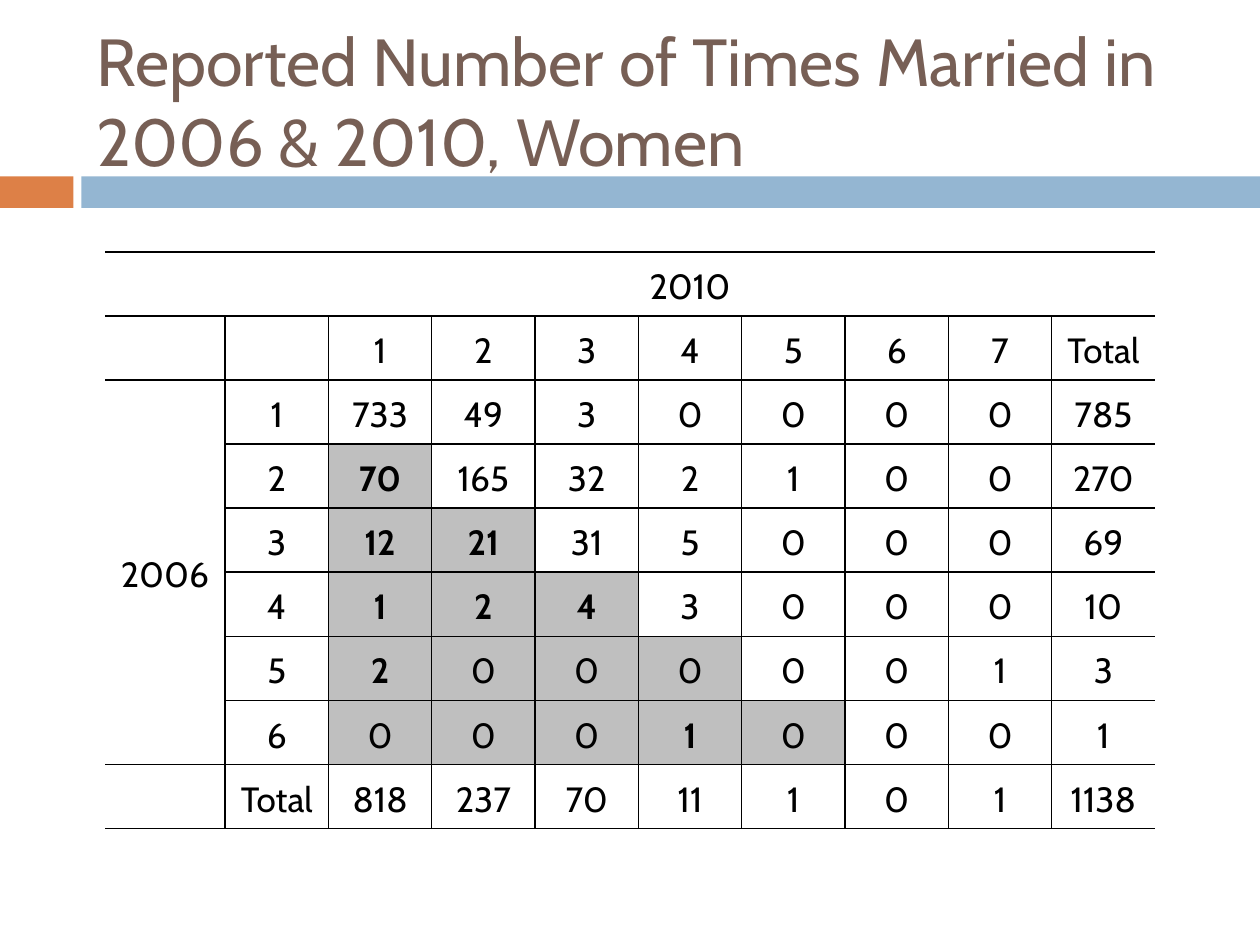
from lxml.etree import SubElement
from pptx import Presentation
from pptx.dml.color import RGBColor
from pptx.enum.shapes import MSO_SHAPE
from pptx.enum.text import MSO_ANCHOR, PP_ALIGN
from pptx.oxml.ns import qn
from pptx.util import Pt

COLORS = {
    "title": "775F55",
    "accent": "DD8047",
    "bar": "94B6D2",
    "ink": "000000",
    "plain": "FFFFFF",
    "shaded": "BFBFBF",
}
COUNTS = [
    [733, 49, 3, 0, 0, 0, 0],
    [70, 165, 32, 2, 1, 0, 0],
    [12, 21, 31, 5, 0, 0, 0],
    [1, 2, 4, 3, 0, 0, 0],
    [2, 0, 0, 0, 0, 0, 1],
    [0, 0, 0, 1, 0, 0, 0],
]
CELL_FORMAT = {
    "margin_left": Pt(5),
    "margin_right": Pt(5),
    "margin_top": 0,
    "margin_bottom": 0,
    "vertical_anchor": MSO_ANCHOR.MIDDLE,
}
FRAME_FORMAT = {"word_wrap": True, "vertical_anchor": MSO_ANCHOR.MIDDLE}
TABLE_FLAGS = {"first_row": False, "horz_banding": False}
LABEL_COLUMNS = 2
HEADER_ROWS = 2


def color(name):
    return RGBColor.from_string(COLORS[name])


def apply(target, values):
    for name, value in values.items():
        setattr(target, name, value)


def add_span(para, text, size, color_name, bold=False):
    span = para.add_run()
    span.text = text
    apply(span.font, {"name": "Cabin", "size": Pt(size), "bold": bold})
    span.font.color.rgb = color(color_name)


def add_band(page, left, width, color_name):
    band = page.shapes.add_shape(
        MSO_SHAPE.RECTANGLE, Pt(left), Pt(100.8), Pt(width), Pt(18)
    )
    band.shadow.inherit = False
    band.fill.solid()
    band.fill.fore_color.rgb = color(color_name)
    band.line.fill.background()


def add_title(page, text):
    box = page.shapes.add_textbox(Pt(48), Pt(18), Pt(642), Pt(78))
    apply(box.text_frame, FRAME_FORMAT)
    add_span(box.text_frame.paragraphs[0], text, 38, "title")


def set_borders(cell, visible_sides):
    properties = cell._tc.get_or_add_tcPr()
    for side in "LRTB":
        line = SubElement(properties, qn(f"a:ln{side}"), w=str(Pt(1)))
        if side in visible_sides:
            fill = SubElement(line, qn("a:solidFill"))
            SubElement(fill, qn("a:srgbClr"), val=COLORS["ink"])
        else:
            SubElement(line, qn("a:noFill"))


def visible_sides(row, column, last_column):
    sides = "TB"
    if row > 0 and column > 0:
        sides += "L"
    if row > 0 and column < last_column:
        sides += "R"
    return sides


def fill_cell(cell, text, sides, shaded):
    apply(cell, CELL_FORMAT)
    set_borders(cell, sides)
    cell.fill.solid()
    cell.fill.fore_color.rgb = color("shaded" if shaded else "plain")
    if text:
        para = cell.text_frame.paragraphs[0]
        apply(para, {"alignment": PP_ALIGN.CENTER, "line_spacing": 1.15})
        add_span(para, text, 20, "ink", shaded and text != "0")


def marriage_rows():
    times = range(1, len(COUNTS[0]) + 1)
    rows = [
        ["", "", "2010"] + [""] * len(times),
        ["", "", *times, "Total"],
    ]
    for number, counts in enumerate(COUNTS, start=1):
        label = "2006" if number == 1 else ""
        rows.append([label, number, *counts, sum(counts)])
    totals = [sum(column) for column in zip(*COUNTS)]
    rows.append(["", "Total", *totals, sum(totals)])
    return rows


def add_marriage_table(page):
    rows = marriage_rows()
    last_row, last_column = len(rows) - 1, len(rows[0]) - 1
    frame = page.shapes.add_table(
        len(rows), len(rows[0]), Pt(60), Pt(144), Pt(600), Pt(329.4)
    )
    table = frame.table
    apply(table, TABLE_FLAGS)
    for index, column in enumerate(table.columns):
        column.width = Pt(59.05 if index else 68.6)
    for row in table.rows:
        row.height = Pt(36.6)
    for r, values in enumerate(rows):
        for c, value in enumerate(values):
            in_body = HEADER_ROWS <= r < last_row and c >= LABEL_COLUMNS
            shaded = in_body and c - LABEL_COLUMNS < r - HEADER_ROWS
            sides = visible_sides(r, c, last_column)
            fill_cell(table.cell(r, c), str(value), sides, shaded)
    table.cell(0, LABEL_COLUMNS).merge(table.cell(0, last_column - 1))
    table.cell(HEADER_ROWS, 0).merge(table.cell(last_row - 1, 0))


def main():
    deck = Presentation()
    apply(deck, {"slide_width": Pt(720), "slide_height": Pt(540)})
    page = deck.slides.add_slide(deck.slide_layouts[6])
    add_band(page, 0, 42, "accent")
    add_band(page, 46.5, 673.5, "bar")
    add_title(page, "Reported Number of Times Married in 2006 & 2010, Women")
    add_marriage_table(page)
    deck.save("out.pptx")


if __name__ == "__main__":
    main()
